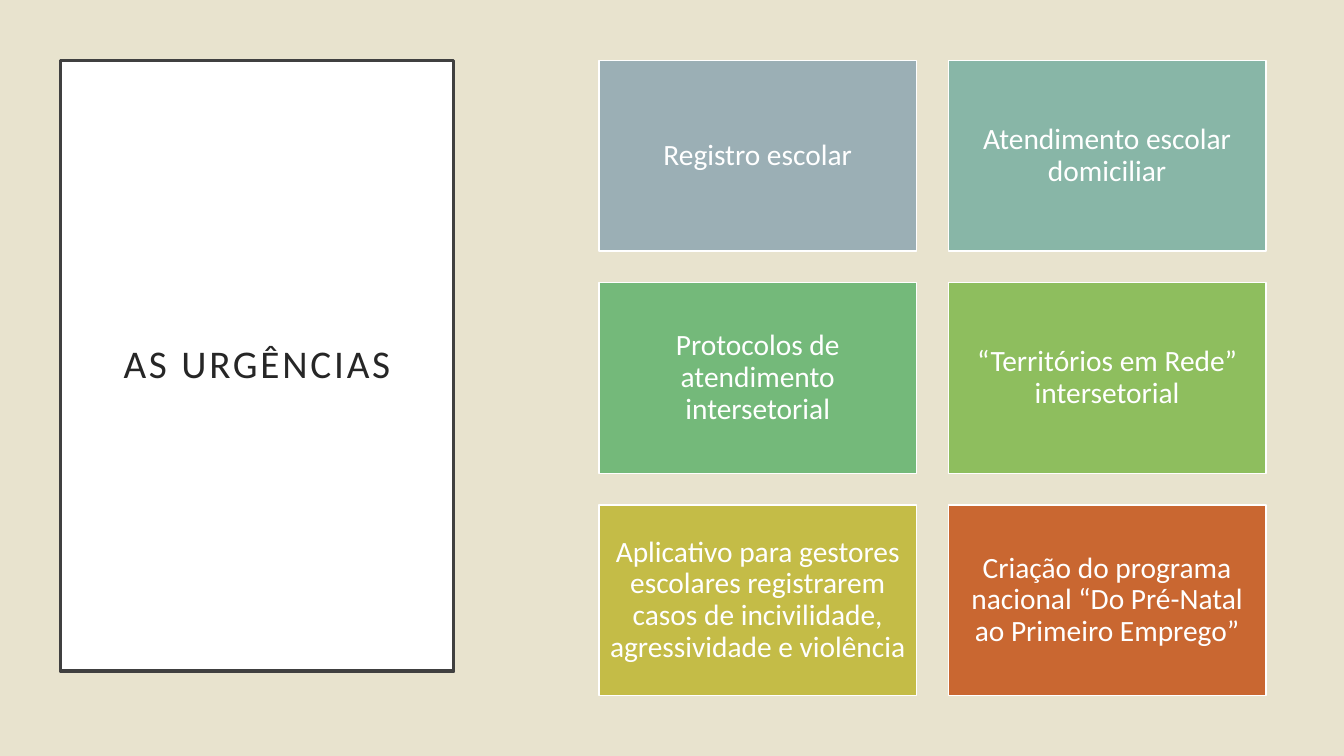
import pptx
import pptx.util
import pptx.dml.color
import pptx.enum.shapes
import pptx.enum.text

Inches = pptx.util.Inches
Pt = pptx.util.Pt

COLORS = {
    "background": "E8E3CE",
    "white": "FFFFFF",
    "frame": "404040",
    "title": "262626",
    "slate": "9BAFB5",
    "teal": "88B6A7",
    "green": "74B97A",
    "lime": "8EBE5E",
    "mustard": "C4BC47",
    "orange": "C96731",
}
FONT = "Calibri"

URGENCIES = [
    ("Registro escolar", "slate"),
    ("Atendimento escolar domiciliar", "teal"),
    ("Protocolos de atendimento intersetorial", "green"),
    ("“Territórios em Rede” intersetorial", "lime"),
    ("Aplicativo para gestores escolares registrarem casos de incivilidade, "
     "agressividade e violência", "mustard"),
    ("Criação do programa nacional “Do Pré-Natal ao Primeiro Emprego”", "orange"),
]

MARGIN_TOP = 0.6
GRID_LEFT = 5.94
GRID_COLUMNS = 2
CARD_WIDTH, CARD_HEIGHT = 3.15, 1.89
GAP = 0.315


def color(name):
    return pptx.dml.color.RGBColor.from_string(COLORS[name])


def add_box(page, place, fill, line, line_width):
    box = page.shapes.add_shape(
        pptx.enum.shapes.MSO_SHAPE.RECTANGLE, *map(Inches, place))
    box.shadow.inherit = False
    box.fill.solid()
    box.fill.fore_color.rgb = color(fill)
    box.line.color.rgb = color(line)
    box.line.width = Pt(line_width)
    return box


def write_text(box, text, size, ink, inset, spacing=0):
    """Centre the text in the box; spacing is the letter spacing in points."""
    frame = box.text_frame
    frame.word_wrap = True
    frame.vertical_anchor = pptx.enum.text.MSO_ANCHOR.MIDDLE
    frame.margin_left = frame.margin_right = Inches(inset)
    frame.margin_top = frame.margin_bottom = Inches(inset)
    frame.text = text
    para = frame.paragraphs[0]
    para.alignment = pptx.enum.text.PP_ALIGN.CENTER
    para.line_spacing = 0.9
    span = para.runs[0]
    span.font.name = FONT
    span.font.size = Pt(size)
    span.font.color.rgb = color(ink)
    if spacing:
        span.font._element.set("spc", str(spacing * 100))


def add_title(page):
    box = add_box(page, (0.6, MARGIN_TOP, 3.9, 6.06), "white", "frame", 2.5)
    write_text(box, "AS URGÊNCIAS", 28, "title", 0.2, spacing=2)


def add_urgency_grid(page):
    for index, (text, fill) in enumerate(URGENCIES):
        row, column = divmod(index, GRID_COLUMNS)
        left = GRID_LEFT + column * (CARD_WIDTH + GAP)
        top = MARGIN_TOP + row * (CARD_HEIGHT + GAP)
        card = add_box(page, (left, top, CARD_WIDTH, CARD_HEIGHT), fill, "white", 1)
        write_text(card, text, 21, "white", 0.09)


def main():
    deck = pptx.Presentation()
    deck.slide_width, deck.slide_height = Inches(13.33), Inches(7.5)
    page = deck.slides.add_slide(deck.slide_layouts[6])
    page.background.fill.solid()
    page.background.fill.fore_color.rgb = color("background")
    add_title(page)
    add_urgency_grid(page)
    deck.save("out.pptx")


if __name__ == "__main__":
    main()
